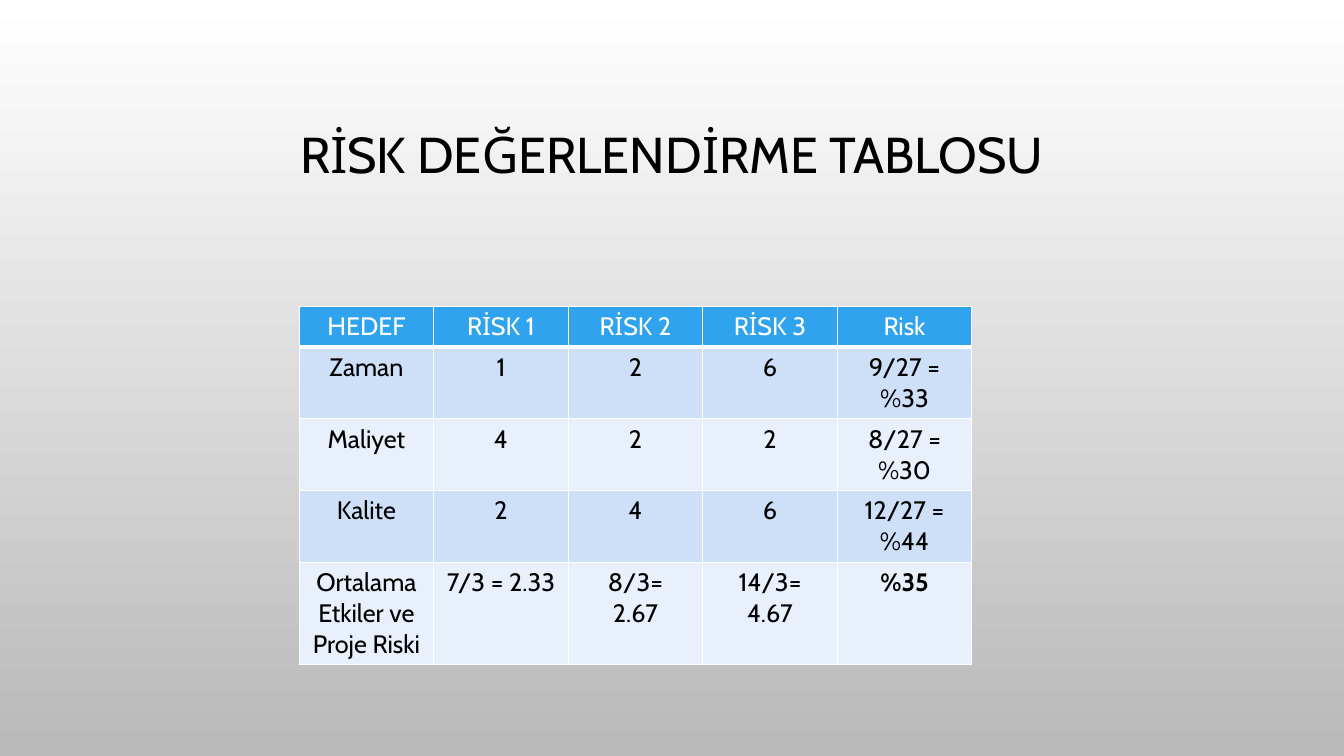
from dataclasses import dataclass

import pptx
import pptx.dml.color
import pptx.enum.text
import pptx.oxml
import pptx.oxml.ns
import pptx.util

FONT = "Cabin"
COLORS = {
    "white": "FFFFFF",
    "grey": "B9B9B9",
    "black": "000000",
    "header": "2FA3EE",
    "dark band": "CDE0F8",
    "light band": "E8F0FC",
}
COLUMN_WIDTH = pptx.util.Cm(3.39)
ROW_HEIGHT = pptx.util.Cm(1.03)


@dataclass(frozen=True)
class RiskRow:
    cells: tuple[str, ...]
    fill: str
    text_color: str = "black"
    bottom_border: float = 1


RISK_ROWS = [
    RiskRow(("HEDEF", "RİSK 1", "RİSK 2", "RİSK 3", "Risk"), "header", "white", 3),
    RiskRow(("Zaman", "1", "2", "6", "9/27 = %33"), "dark band"),
    RiskRow(("Maliyet", "4", "2", "2", "8/27 = %30"), "light band"),
    RiskRow(("Kalite", "2", "4", "6", "12/27 = %44"), "dark band"),
    RiskRow(
        ("Ortalama Etkiler ve Proje Riski", "7/3 = 2.33", "8/3=\n2.67", "14/3=\n4.67", "%35"),
        "light band",
    ),
]


def rgb(name: str) -> pptx.dml.color.RGBColor:
    return pptx.dml.color.RGBColor.from_string(COLORS[name])


def format_text(frame, size: float, color: str, bold: bool = False) -> None:
    for para in frame.paragraphs:
        para.alignment = pptx.enum.text.PP_ALIGN.CENTER
        for span in para.runs:
            span.font.name = FONT
            span.font.size = pptx.util.Pt(size)
            span.font.bold = bold
            span.font.color.rgb = rgb(color)


def add_borders(cell, bottom_width: float) -> None:
    """Give the cell white borders, which must stand before its fill."""
    properties = cell._tc.get_or_add_tcPr()
    widths = {"lnL": 1, "lnR": 1, "lnT": 1, "lnB": bottom_width}
    for index, (side, width) in enumerate(widths.items()):
        border = pptx.oxml.parse_xml(
            f'<a:{side} {pptx.oxml.ns.nsdecls("a")} w="{pptx.util.Pt(width)}">'
            f'<a:solidFill><a:srgbClr val="{COLORS["white"]}"/></a:solidFill>'
            f"</a:{side}>"
        )
        properties.insert(index, border)


def paint_background(slide) -> None:
    fill = slide.background.fill
    fill.gradient()
    fill.gradient_angle = 270
    for stop, color in zip(fill.gradient_stops, ("white", "grey")):
        stop.color.rgb = rgb(color)


def add_title(slide) -> None:
    title = slide.shapes.title
    title.left, title.top = pptx.util.Cm(2.54), pptx.util.Cm(1.73)
    title.width, title.height = pptx.util.Cm(28.78), pptx.util.Cm(4.45)
    frame = title.text_frame
    frame.text = "RİSK DEĞERLENDİRME TABLOSU"
    frame.word_wrap = True
    frame.vertical_anchor = pptx.enum.text.MSO_ANCHOR.MIDDLE
    frame.paragraphs[0].line_spacing = 0.9
    format_text(frame, 36, "black")


def add_risk_table(slide) -> None:
    column_count = len(RISK_ROWS[0].cells)
    table = slide.shapes.add_table(
        len(RISK_ROWS),
        column_count,
        pptx.util.Cm(7.54),
        pptx.util.Cm(7.72),
        COLUMN_WIDTH * column_count,
        ROW_HEIGHT * len(RISK_ROWS),
    ).table
    for column in table.columns:
        column.width = COLUMN_WIDTH
    for row, risk_row in zip(table.rows, RISK_ROWS):
        row.height = ROW_HEIGHT
        for cell, text in zip(row.cells, risk_row.cells):
            cell.text_frame.text = text
            format_text(cell.text_frame, 18, risk_row.text_color, bold=text == "%35")
            cell.fill.solid()
            cell.fill.fore_color.rgb = rgb(risk_row.fill)
            add_borders(cell, risk_row.bottom_border)


def main() -> None:
    deck = pptx.Presentation()
    deck.slide_width = pptx.util.Cm(33.87)
    deck.slide_height = pptx.util.Cm(19.05)
    slide = deck.slides.add_slide(deck.slide_layouts.get_by_name("Title Only"))
    paint_background(slide)
    add_title(slide)
    add_risk_table(slide)
    deck.save("out.pptx")


if __name__ == "__main__":
    main()
